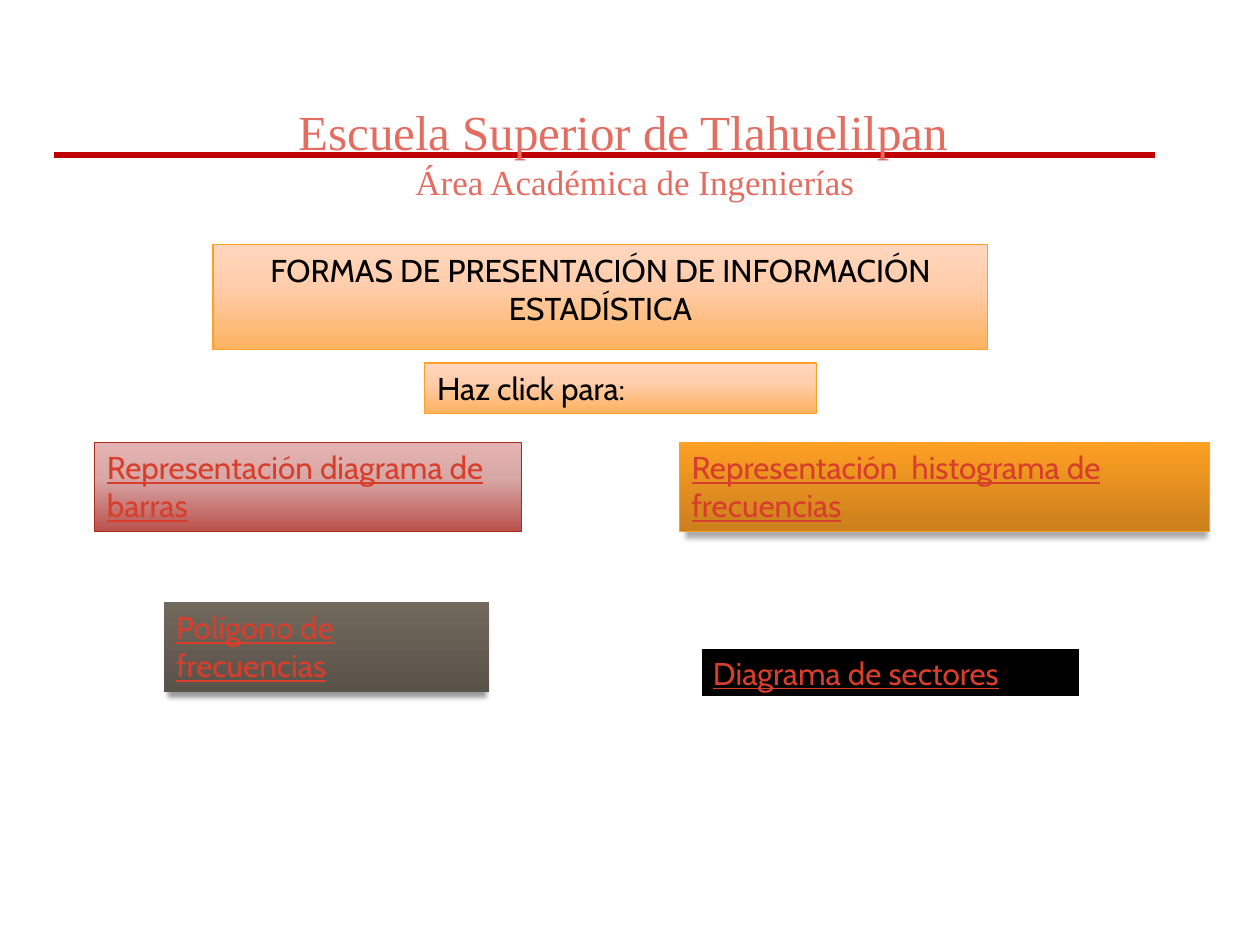
import pptx
import pptx.dml.color
import pptx.enum.shapes
import pptx.enum.text
import pptx.oxml
import pptx.oxml.ns
import pptx.util

WIDE, HIGH = pptx.util.Inches(10), pptx.util.Inches(7.5)
ALIGN = pptx.enum.text.PP_ALIGN
HUES = {
    "rule": "C00000", "head": "E36D61", "text": "000000", "link": "D83E2C",
    "gold": "FDA023", "red": "AA2B1E", "black": "000000", "white": "FFFFFF",
}
FADES = {
    "peach": [(0, "FFD6BD"), (40, "FFCDAB"), (100, "FDB25F")],
    "rose": [(0, "E5B3B2"), (40, "D7A8A6"), (100, "BA514C")],
    "amber": [(0, "FDA023"), (100, "CB801C")],
    "stone": [(0, "71685C"), (100, "5A5349")],
}
# text, place, fill, line, line width, shadow opacity
LINKS = [
    ("Representación diagrama de barras", (7.5, 46.8, 33.9, 9.47), "rose", "red", 0.75, 0),
    ("Representación  histograma de frecuencias", (53.9, 46.8, 42.1, 9.47), "amber", "gold", 0.75, 32),
    ("Polígono de frecuencias", (13, 63.73, 25.8, 9.47), "stone", None, 0, 40),
    ("Diagrama de sectores", (55.6, 68.53, 30.2, 5.33), "black", "white", 2, 0),
]


def color(name):
    return pptx.dml.color.RGBColor.from_string(HUES[name])


def share(x, y, w, h):
    """Turn percentages of the slide's size into lengths."""
    return [int(n * full / 100) for n, full in zip((x, y, w, h), (WIDE, HIGH) * 2)]


def add_run(para, text, size, font, hue, line=None):
    run = para.add_run()
    run.text = text
    run.font.size = pptx.util.Pt(size)
    run.font.name = font
    run.font.underline = line
    run.font.color.rgb = color(hue)


def set_fade(fill, stops):
    """Fill from top to bottom through the given stops."""
    fill.gradient()
    fill.gradient_angle = 270
    items = fill._xPr.find(".//" + pptx.oxml.ns.qn("a:gsLst"))
    items.clear()
    for pos, hue in stops:
        items.append(pptx.oxml.parse_xml(
            f'<a:gs {pptx.oxml.ns.nsdecls("a")} pos="{pos * 1000}">'
            f'<a:srgbClr val="{hue}"/></a:gs>'))


def cast_shade(shape, alpha):
    props = shape._element.spPr
    props.remove(props.find(pptx.oxml.ns.qn("a:effectLst")))
    props.append(pptx.oxml.parse_xml(
        f'<a:effectLst {pptx.oxml.ns.nsdecls("a")}>'
        '<a:outerShdw blurRad="38100" dist="38100" dir="4800000" sx="98000" '
        'algn="ctr" rotWithShape="0"><a:srgbClr val="000000">'
        f'<a:alpha val="{alpha * 1000}"/></a:srgbClr></a:outerShdw></a:effectLst>'))


def set_frame(shape):
    frame = shape.text_frame
    frame.word_wrap = True
    frame.auto_size = pptx.enum.text.MSO_AUTO_SIZE.SHAPE_TO_FIT_TEXT
    frame.vertical_anchor = pptx.enum.text.MSO_ANCHOR.TOP
    return frame


def style_box(shape, text, fill, edge, width, hue, align=ALIGN.LEFT, line=None):
    if fill in FADES:
        set_fade(shape.fill, FADES[fill])
    else:
        shape.fill.solid()
        shape.fill.fore_color.rgb = color(fill)
    if edge:
        shape.line.color.rgb = color(edge)
        shape.line.width = pptx.util.Pt(width)
    else:
        shape.line.fill.background()
    para = set_frame(shape).paragraphs[0]
    para.alignment = align
    add_run(para, text, 18, "Cabin", hue, line)


def add_rect(slide, place):
    shape = slide.shapes.add_shape(pptx.enum.shapes.MSO_SHAPE.RECTANGLE, *share(*place))
    shape.shadow.inherit = False
    return shape


def add_rule(slide):
    left, top, width, _ = share(4.3, 16.4, 87.4, 0)
    rule = slide.shapes.add_connector(
        pptx.enum.shapes.MSO_CONNECTOR.STRAIGHT, left, top, left + width, top)
    rule.line.color.rgb = color("rule")
    rule.line.width = pptx.util.Pt(3)
    rule._element.spPr.append(
        pptx.oxml.parse_xml(f'<a:effectLst {pptx.oxml.ns.nsdecls("a")}/>'))


def add_head(slide):
    frame = set_frame(slide.shapes.add_textbox(*share(17.7, 10.13, 65.4, 12.13)))
    school = frame.paragraphs[0]
    add_run(school, "\t", 18, "Arial", "head")
    add_run(school, "Escuela Superior de Tlahuelilpan", 28, "Times New Roman", "head")
    area = frame.add_paragraph()
    area.alignment = ALIGN.CENTER
    add_run(area, "Área Académica de Ingenierías", 20, "Times New Roman", "head")


def add_title(slide):
    title = slide.shapes.title
    title.left, title.top, title.width, title.height = share(16.9, 25.87, 61.5, 9.47)
    style_box(title, "FORMAS DE PRESENTACIÓN DE INFORMACIÓN ESTADÍSTICA",
              "peach", "gold", 0.75, "text", ALIGN.CENTER)


def main():
    deck = pptx.Presentation()
    deck.slide_width, deck.slide_height = WIDE, HIGH
    slide = deck.slides.add_slide(deck.slide_layouts[5])
    add_rule(slide)
    add_head(slide)
    add_title(slide)
    for text, place, fill, edge, width, alpha in LINKS:
        box = add_rect(slide, place)
        style_box(box, text, fill, edge, width, "link", line=True)
        if alpha:
            cast_shade(box, alpha)
    style_box(add_rect(slide, (33.7, 38.4, 31.1, 5.33)), "Haz click para:",
              "peach", "gold", 0.75, "text")
    deck.save("out.pptx")


if __name__ == "__main__":
    main()
